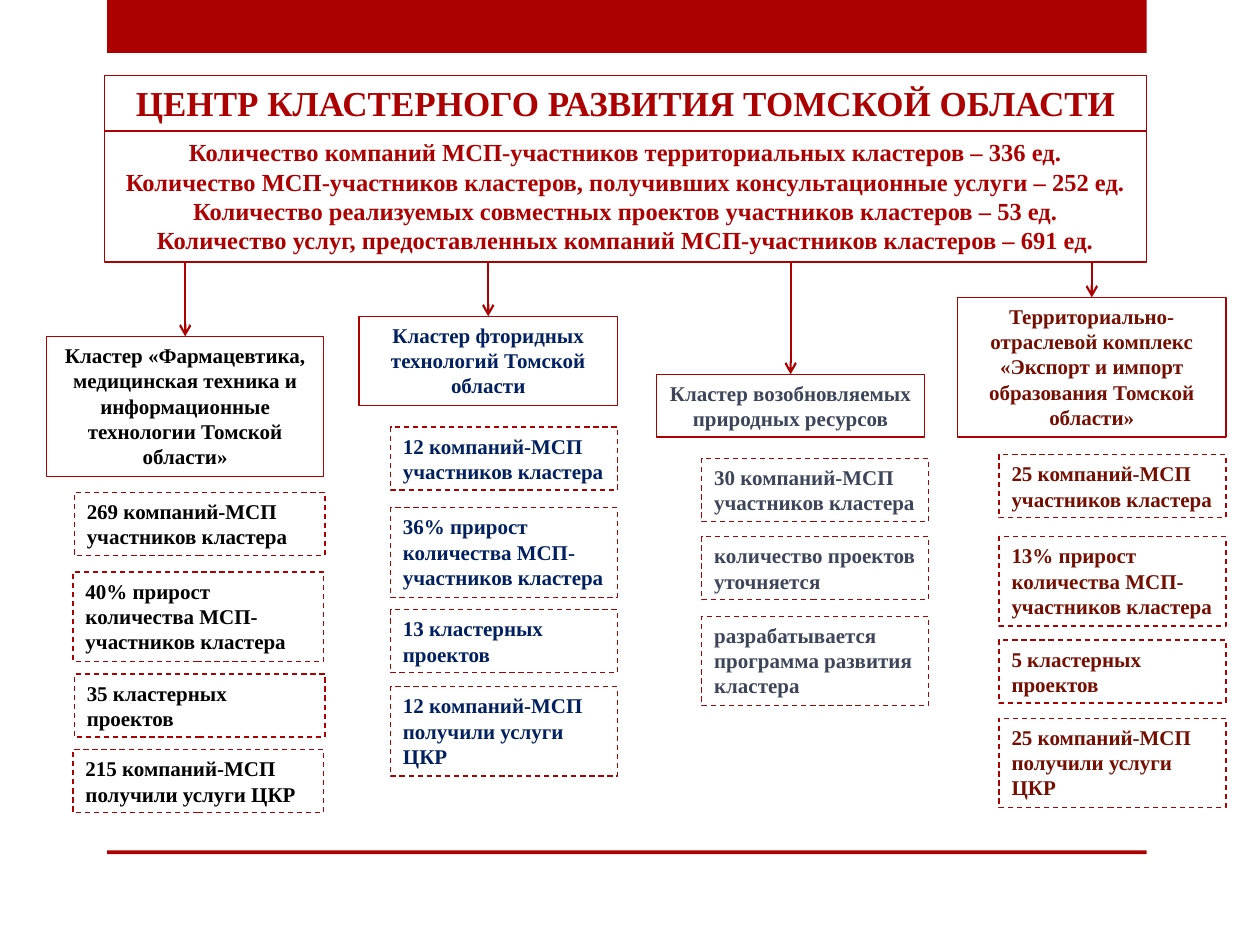
from dataclasses import dataclass

from lxml.etree import SubElement
from pptx import Presentation
from pptx.dml.color import RGBColor as Rgb
from pptx.enum.dml import MSO_LINE_DASH_STYLE as Dash
from pptx.enum.shapes import MSO_CONNECTOR as Connector
from pptx.enum.shapes import MSO_SHAPE as Shape
from pptx.enum.text import MSO_ANCHOR as Anchor
from pptx.enum.text import MSO_AUTO_SIZE as AutoSize
from pptx.enum.text import PP_ALIGN as Align
from pptx.oxml.ns import qn
from pptx.slide import Slide
from pptx.util import Inches, Pt


@dataclass(frozen=True)
class Theme:
    font: str = "Times New Roman"
    red: str = "AD0101"
    black: str = "000000"
    navy: str = "002060"
    slate: str = "3C4559"
    brown: str = "730E00"
    title_size: int = 20
    summary_size: int = 14
    body_size: int = 12
    box_line: float = 0.75
    arrow_line: float = 1.25


@dataclass(frozen=True)
class Area:
    left: float
    top: float
    width: float
    height: float


@dataclass(frozen=True)
class Fact:
    text: str
    left: float
    top: float
    lines: int = 2


@dataclass(frozen=True)
class Cluster:
    name: str
    area: Area
    color: str
    fact_width: float
    facts: tuple[Fact, ...]


THEME = Theme()
LINE_HEIGHTS = {2: 0.5, 3: 0.71}
TITLE = "ЦЕНТР КЛАСТЕРНОГО РАЗВИТИЯ ТОМСКОЙ ОБЛАСТИ"
TITLE_AREA = Area(0.83, 0.6, 8.27, 0.44)
SUMMARY_AREA = Area(0.83, 1.04, 8.27, 1.04)
SUMMARY = "\n".join((
    "Количество компаний МСП-участников территориальных кластеров – 336 ед.",
    "Количество МСП-участников кластеров, получивших консультационные услуги – 252 ед.",
    "Количество реализуемых совместных проектов участников кластеров – 53 ед.",
    "Количество услуг, предоставленных компаний МСП-участников кластеров – 691 ед.",
))
BANDS = (Area(0.85, 0, 8.25, 0.42), Area(0.85, 6.75, 8.25, 0.03))
CLUSTERS = (
    Cluster(
        "Кластер «Фармацевтика, медицинская техника и информационные технологии Томской области»",
        Area(0.37, 2.67, 2.2, 1.11), THEME.black, 1.99,
        (
            Fact("269 компаний-МСП участников кластера", 0.59, 3.91),
            Fact("40% прирост количества МСП-участников кластера", 0.58, 4.54, 3),
            Fact("35 кластерных проектов", 0.59, 5.35),
            Fact("215 компаний-МСП получили услуги ЦКР", 0.58, 5.95),
        ),
    ),
    Cluster(
        "Кластер фторидных технологий Томской области",
        Area(2.85, 2.51, 2.05, 0.71), THEME.navy, 1.8,
        (
            Fact("12 компаний-МСП участников кластера", 3.1, 3.39),
            Fact("36% прирост количества МСП-участников кластера", 3.1, 4.03, 3),
            Fact("13 кластерных проектов", 3.1, 4.84),
            Fact("12 компаний-МСП получили услуги ЦКР", 3.1, 5.45, 3),
        ),
    ),
    Cluster(
        "Кластер возобновляемых природных ресурсов",
        Area(5.21, 2.97, 2.13, 0.5), THEME.slate, 1.8,
        (
            Fact("30 компаний-МСП участников кластера", 5.57, 3.64),
            Fact("количество проектов уточняется", 5.57, 4.26),
            Fact("разрабатывается программа развития кластера", 5.57, 4.89, 3),
        ),
    ),
    Cluster(
        "Территориально-отраслевой комплекс «Экспорт и импорт образования Томской области»",
        Area(7.6, 2.36, 2.13, 1.11), THEME.brown, 1.8,
        (
            Fact("25 компаний-МСП участников кластера", 7.93, 3.61),
            Fact("13% прирост количества МСП-участников кластера", 7.93, 4.26, 3),
            Fact("5 кластерных проектов", 7.93, 5.08),
            Fact("25 компаний-МСП получили услуги ЦКР", 7.93, 5.7, 3),
        ),
    ),
)


def add_rectangle(page: Slide, area: Area):
    box = page.shapes.add_shape(
        Shape.RECTANGLE, Inches(area.left), Inches(area.top),
        Inches(area.width), Inches(area.height),
    )
    box.shadow.inherit = False
    return box


def add_band(page: Slide, area: Area) -> None:
    band = add_rectangle(page, area)
    band.fill.solid()
    band.fill.fore_color.rgb = Rgb.from_string(THEME.red)
    band.line.fill.background()


def format_box(box, text: str, size: int, color: str, align: Align, dash: Dash) -> None:
    box.fill.background()
    box.line.color.rgb = Rgb.from_string(THEME.red)
    box.line.width = Pt(THEME.box_line)
    box.line.dash_style = dash
    frame = box.text_frame
    frame.text = text
    frame.word_wrap = True
    frame.auto_size = AutoSize.NONE
    frame.vertical_anchor = Anchor.TOP
    for para in frame.paragraphs:
        para.alignment = align
        for span in para.runs:
            span.font.name = THEME.font
            span.font.size = Pt(size)
            span.font.bold = True
            span.font.color.rgb = Rgb.from_string(color)


def place_title(page: Slide) -> None:
    title = page.shapes.title
    title.left, title.top = Inches(TITLE_AREA.left), Inches(TITLE_AREA.top)
    title.width, title.height = Inches(TITLE_AREA.width), Inches(TITLE_AREA.height)
    format_box(title, TITLE, THEME.title_size, THEME.red, Align.CENTER, Dash.SOLID)


def add_arrow(page: Slide, x: float, top: float, bottom: float) -> None:
    arrow = page.shapes.add_connector(
        Connector.STRAIGHT, Inches(x), Inches(top), Inches(x), Inches(bottom)
    )
    arrow.line.color.rgb = Rgb.from_string(THEME.red)
    arrow.line.width = Pt(THEME.arrow_line)
    SubElement(arrow.line._get_or_add_ln(), qn("a:tailEnd"), type="arrow")
    SubElement(arrow._element.spPr, qn("a:effectLst"))


def add_cluster(page: Slide, cluster: Cluster) -> None:
    area = cluster.area
    add_arrow(page, area.left + area.width / 2, SUMMARY_AREA.top + SUMMARY_AREA.height, area.top)
    format_box(add_rectangle(page, area), cluster.name, THEME.body_size,
               cluster.color, Align.CENTER, Dash.SOLID)
    for fact in cluster.facts:
        fact_area = Area(fact.left, fact.top, cluster.fact_width, LINE_HEIGHTS[fact.lines])
        format_box(add_rectangle(page, fact_area), fact.text, THEME.body_size,
                   cluster.color, Align.LEFT, Dash.DASH)


def main() -> None:
    """Build the slide of the regional cluster development centre."""
    deck = Presentation()
    deck.slide_width, deck.slide_height = Inches(10), Inches(7.5)
    page = deck.slides.add_slide(deck.slide_layouts[5])
    for band in BANDS:
        add_band(page, band)
    place_title(page)
    format_box(add_rectangle(page, SUMMARY_AREA), SUMMARY, THEME.summary_size,
               THEME.red, Align.CENTER, Dash.SOLID)
    for cluster in CLUSTERS:
        add_cluster(page, cluster)
    deck.save("out.pptx")


if __name__ == "__main__":
    main()
